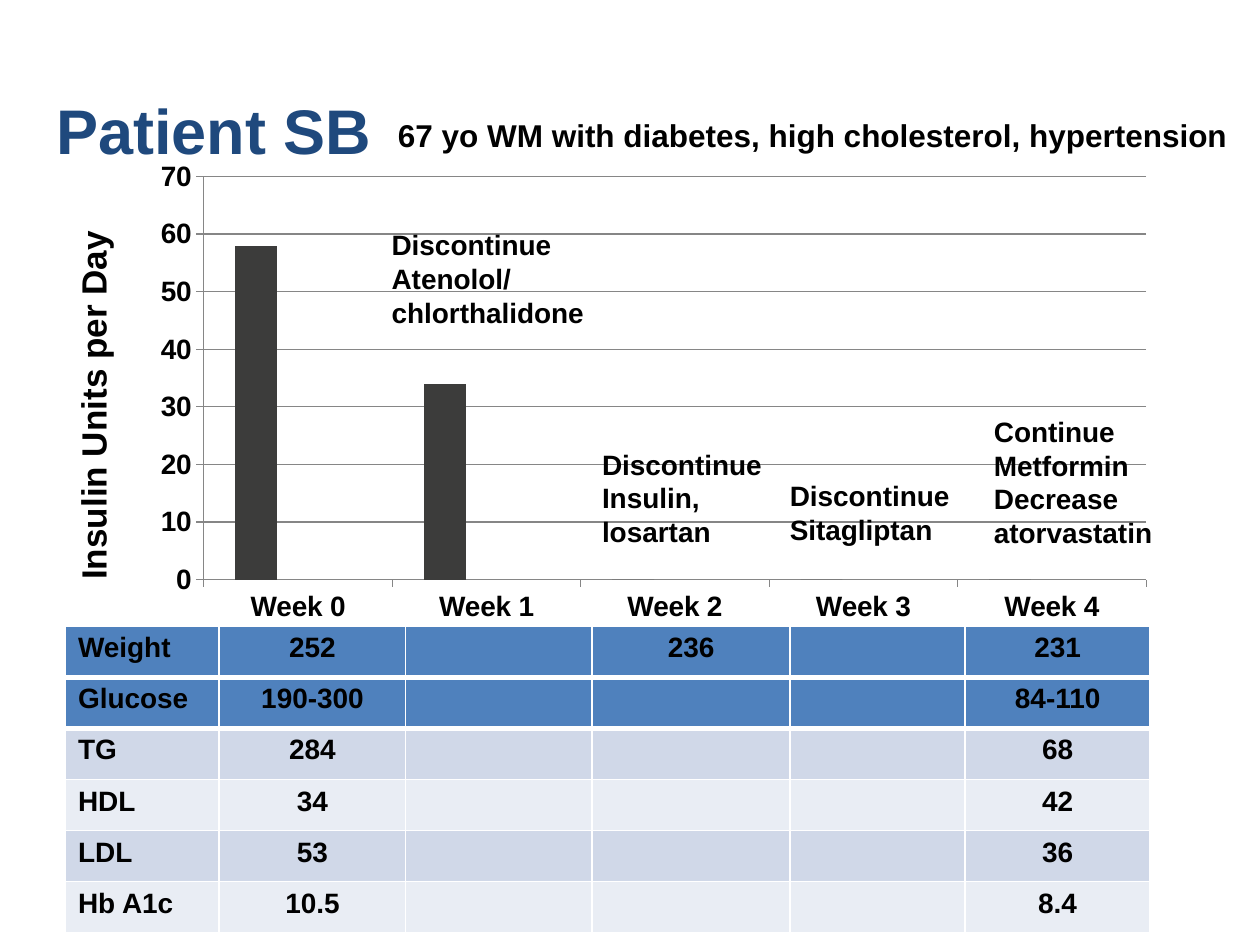
from lxml import etree
from pptx import Presentation
from pptx.chart.data import CategoryChartData
from pptx.dml.color import RGBColor
from pptx.enum.chart import XL_CHART_TYPE, XL_TICK_MARK
from pptx.enum.text import PP_ALIGN
from pptx.oxml import parse_xml
from pptx.oxml.ns import nsdecls, qn
from pptx.util import Inches, Pt

COLUMNS = XL_CHART_TYPE.COLUMN_CLUSTERED
TICK_OUT = XL_TICK_MARK.OUTSIDE
LEFT, CENTER = PP_ALIGN.LEFT, PP_ALIGN.CENTER

FONT = "Arial"
BLACK = RGBColor(0x00, 0x00, 0x00)
NAVY = RGBColor(0x1F, 0x49, 0x7D)
GRID = RGBColor(0x86, 0x86, 0x86)
HEADER = RGBColor(0x4F, 0x81, 0xBD)
BANDS = [RGBColor(0xD0, 0xD8, 0xE8), RGBColor(0xE9, 0xED, 0xF4)]
HEADER_ROWS = 2

# Content
WEEKS = ["Week 0", "Week 1", "Week 2", "Week 3", "Week 4"]
SERIES = [
    ("Series 1", [58, 34, 0, 0, 0], RGBColor(0x3C, 0x3C, 0x3B)),
    ("Series 2", [None] * 5, RGBColor(0xBE, 0x32, 0x2E)),
    ("Series 3", [None] * 5, RGBColor(0xDD, 0x68, 0x22)),
]
PLOT_AREA = {"x": 0.06, "y": 0.05, "w": 0.92, "h": 0.84}  # fractions of chart

LABS = [
    ("Weight", "252", "", "236", "", "231"),
    ("Glucose", "190-300", "", "", "", "84-110"),
    ("TG", "284", "", "", "", "68"),
    ("HDL", "34", "", "", "", "42"),
    ("LDL", "53", "", "", "", "36"),
    ("Hb A1c", "10.5", "", "", "", "8.4"),
]
COL_WIDTHS = [1.22, 1.48, 1.48, 1.57, 1.39, 1.47]
ROW_HEIGHT = 0.405

# Paragraphs, box (left, top, width, height), format
TEXTS = [
    (["Patient SB"], (0.35, 0.68, 6.51, 0.71), {"size": 36, "color": NAVY}),
    (["67 yo WM with diabetes, high cholesterol, hypertension"],
     (3.06, 0.87, 6.87, 0.55), {"size": 18, "before": 3.6}),
    (["Insulin Units per Day"], (0.52, 1.21, 0.54, 3.49),
     {"size": 20, "vert": "vert270"}),
    (["Discontinue", "Atenolol/ chlorthalidone"], (3.01, 1.76, 1.74, 0.91), {}),
    (["Discontinue", "Insulin, losartan"], (4.68, 3.5, 1.5, 0.91), {}),
    (["Discontinue", "Sitagliptan"], (6.17, 3.75, 1.5, 0.64), {}),
    (["Continue Metformin", "Decrease atorvastatin"], (7.79, 3.24, 1.5, 1.18), {}),
]


def set_font(font, size=16, color=BLACK):
    font.name, font.size, font.bold = FONT, Pt(size), True
    font.color.rgb = color


def write(tf, lines, size=16, color=BLACK, align=LEFT, before=0, vert=None):
    tf.word_wrap = True
    if vert:
        tf._txBody.bodyPr.set("vert", vert)
    for i, line in enumerate(lines):
        p = tf.paragraphs[0] if i == 0 else tf.add_paragraph()
        p.alignment = align
        p.space_before = Pt(before)
        r = p.add_run()
        r.text = line
        set_font(r.font, size, color)


def add_chart(s):
    data = CategoryChartData()
    data.categories = WEEKS
    for name, values, _ in SERIES:
        data.add_series(name, values)
    box = map(Inches, (1.13, 1.21, 8.13, 3.81))
    chart = s.shapes.add_chart(COLUMNS, *box, data).chart
    chart.has_legend = chart.has_title = False
    set_font(chart.font)

    plot = chart.plots[0]
    plot.gap_width, plot.overlap, plot.vary_by_categories = 150, 0, False
    for series, (_, _, color) in zip(plot.series, SERIES):
        series.format.fill.solid()
        series.format.fill.fore_color.rgb = color

    value_axis = chart.value_axis
    value_axis.minimum_scale, value_axis.maximum_scale = 0, 70
    value_axis.major_unit = 10
    value_axis.major_gridlines.format.line.color.rgb = GRID
    for axis in (chart.category_axis, value_axis):
        axis.major_tick_mark = TICK_OUT
        axis.format.line.color.rgb = GRID

    # Fixed inner plot area
    area = chart._chartSpace.find(".//" + qn("c:plotArea"))
    for old in area.findall(qn("c:layout")):
        area.remove(old)
    layout = parse_xml(f"<c:layout {nsdecls('c')}><c:manualLayout/></c:layout>")
    settings = {"layoutTarget": "inner", "xMode": "edge", "yMode": "edge", **PLOT_AREA}
    for tag, value in settings.items():
        etree.SubElement(layout[0], qn("c:" + tag)).set("val", str(value))
    area.insert(0, layout)


def set_borders(cell, top, bottom):
    tcPr = cell._tc.get_or_add_tcPr()
    widths = [("L", 1), ("R", 1), ("T", top), ("B", bottom)]
    for i, (side, width) in enumerate(widths):
        tcPr.insert(i, parse_xml(
            f'<a:ln{side} {nsdecls("a")} w="{Pt(width)}"><a:solidFill>'
            f'<a:srgbClr val="FFFFFF"/></a:solidFill></a:ln{side}>'))


def add_table(s):
    table = s.shapes.add_table(
        len(LABS), len(COL_WIDTHS), Inches(0.52), Inches(4.97),
        Inches(sum(COL_WIDTHS)), Inches(ROW_HEIGHT * len(LABS))).table
    for column, width in zip(table.columns, COL_WIDTHS):
        column.width = Inches(width)
    for i, values in enumerate(LABS):
        table.rows[i].height = Inches(ROW_HEIGHT)
        for j, value in enumerate(values):
            cell = table.cell(i, j)
            cell.fill.solid()
            cell.fill.fore_color.rgb = HEADER if i < HEADER_ROWS else BANDS[i % 2]
            set_borders(cell, top=3 if 0 < i <= HEADER_ROWS else 1,
                        bottom=3 if i < HEADER_ROWS else 1)
            if value:
                write(cell.text_frame, [value], align=CENTER if j else LEFT)


def main():
    prs = Presentation()
    prs.slide_width, prs.slide_height = Inches(10), Inches(7.5)
    s = prs.slides.add_slide(prs.slide_layouts[6])
    add_chart(s)
    add_table(s)
    # Title, axis caption and medication notes
    for lines, box, style in TEXTS:
        write(s.shapes.add_textbox(*map(Inches, box)).text_frame, lines, **style)
    prs.save("out.pptx")


if __name__ == "__main__":
    main()
